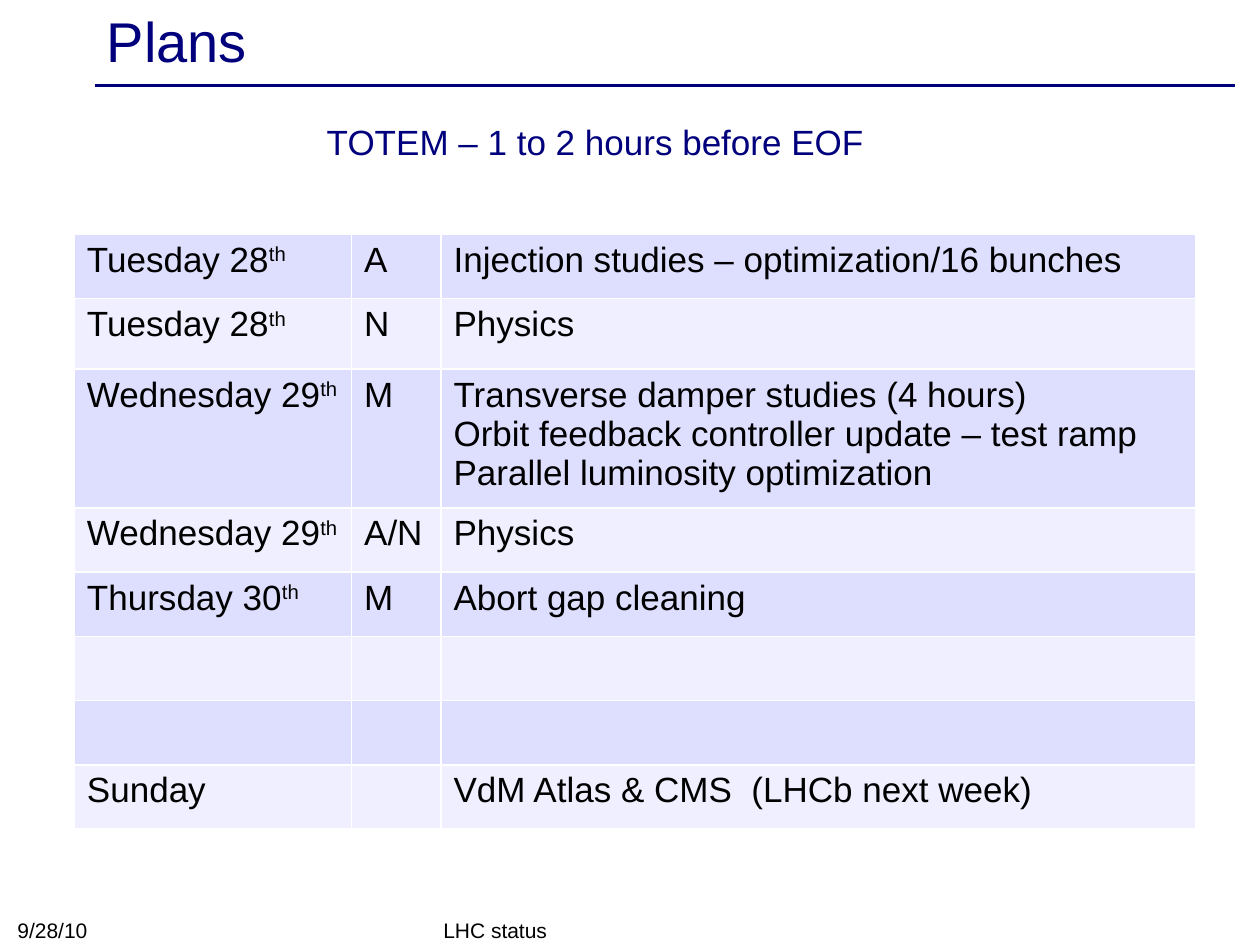
from lxml.etree import SubElement
from pptx import Presentation
from pptx.dml.color import RGBColor
from pptx.enum.shapes import MSO_CONNECTOR
from pptx.enum.text import MSO_ANCHOR, PP_ALIGN
from pptx.oxml import parse_xml
from pptx.oxml.ns import nsdecls, qn
from pptx.util import Inches, Pt

NAVY, BLACK, WHITE = "00007D", "000000", "FFFFFF"
BANDS = ["DEDEFF", "EFEFFF"]
PLANS = [
    ("Tuesday 28^th", "A", "Injection studies – optimization/16 bunches"),
    ("Tuesday 28^th", "N", "Physics"),
    ("Wednesday 29^th", "M", "Transverse damper studies (4 hours)\n"
     "Orbit feedback controller update – test ramp\n"
     "Parallel luminosity optimization"),
    ("Wednesday 29^th", "A/N", "Physics"),
    ("Thursday 30^th", "M", "Abort gap cleaning"),
    ("", "", ""),
    ("", "", ""),
    ("Sunday", "", "VdM Atlas & CMS  (LHCb next week)"),
]


def color(code):
    """Turn a hex string into a colour."""
    return RGBColor.from_string(code)


def grid(*units):
    """Turn steps of a 20 by 15 grid into lengths."""
    return [Inches(unit / 2) for unit in units]


def write(frame, text, size=20, ink=BLACK, align=PP_ALIGN.LEFT, font="Arial"):
    """Fill a frame with lines, raising what follows a caret."""
    for i, line in enumerate(text.split("\n")):
        para = frame.paragraphs[0] if i == 0 else frame.add_paragraph()
        para.alignment = align
        para.font.size = Pt(size)
        for level, part in enumerate(line.split("^")):
            if not part:
                continue
            run = para.add_run()
            run.text = part
            run.font.name = font
            run.font.size = Pt(size)
            run.font.color.rgb = color(ink)
            if level:
                run.font._element.set("baseline", "30000")


class Deck:
    """Hold the style and the current slide."""

    def __init__(self):
        """Start a deck with one blank slide."""
        self.file = Presentation()
        self.file.slide_width, self.file.slide_height = grid(20, 15)
        self.slide = self.file.slides.add_slide(self.file.slide_layouts[6])
        self.shapes = self.slide.shapes

    def label(self, text, *place, anchor=MSO_ANCHOR.TOP, **style):
        """Add a text box."""
        frame = self.shapes.add_textbox(*grid(*place)).text_frame
        frame.word_wrap = True
        frame.vertical_anchor = anchor
        write(frame, text, **style)

    def rule(self, *ends, ink=NAVY, width=2):
        """Add a straight line without shadow."""
        line = self.shapes.add_connector(MSO_CONNECTOR.STRAIGHT, *grid(*ends))
        line.line.color.rgb = color(ink)
        line.line.width = Pt(width)
        SubElement(line._element.spPr, qn("a:effectLst"))

    def edge(self, cell, ink=WHITE, width=1):
        """Draw the four borders of a cell."""
        props = cell._tc.get_or_add_tcPr()
        for i, side in enumerate("LRTB"):
            props.insert(i, parse_xml(
                f'<a:ln{side} {nsdecls("a")} w="{Pt(width)}"><a:solidFill>'
                f'<a:srgbClr val="{ink}"/></a:solidFill></a:ln{side}>'))

    def table(self, rows, left, top, widths, heights):
        """Add a banded table."""
        size = grid(left, top, sum(widths), sum(heights))
        table = self.shapes.add_table(len(rows), len(widths), *size).table
        table.first_row = table.horz_banding = False
        for col, width in zip(table.columns, grid(*widths)):
            col.width = width
        for row, height in zip(table.rows, grid(*heights)):
            row.height = height
        for r, row in enumerate(rows):
            for c, text in enumerate(row):
                cell = table.cell(r, c)
                cell.fill.solid()
                cell.fill.fore_color.rgb = color(BANDS[r % 2])
                self.edge(cell)
                write(cell.text_frame, text)


def main():
    """Build the plans slide."""
    deck = Deck()
    deck.rule(1.5, 1.36, 19.6, 1.36)
    deck.label("Plans", 1.5, 0.06, 18, 1.14, size=32, ink=NAVY,
               anchor=MSO_ANCHOR.MIDDLE)
    deck.label("LHC status", 6.84, 14.5, 6.34, 0.56, size=12,
               anchor=MSO_ANCHOR.BOTTOM)
    deck.label("9/28/10", 0.08, 14.48, 4.66, 0.58, size=12,
               anchor=MSO_ANCHOR.BOTTOM)
    heights = [1.02] * len(PLANS)
    heights[1:3] = [1.12, 2.04]
    deck.table(PLANS, 1.18, 3.72, [4.4, 1.42, 11.98], heights)
    deck.label("TOTEM – 1 to 2 hours before EOF", 4.8, 1.82, 9.3, 0.88,
               ink=NAVY, align=PP_ALIGN.CENTER)
    deck.file.save("out.pptx")


if __name__ == "__main__":
    main()
